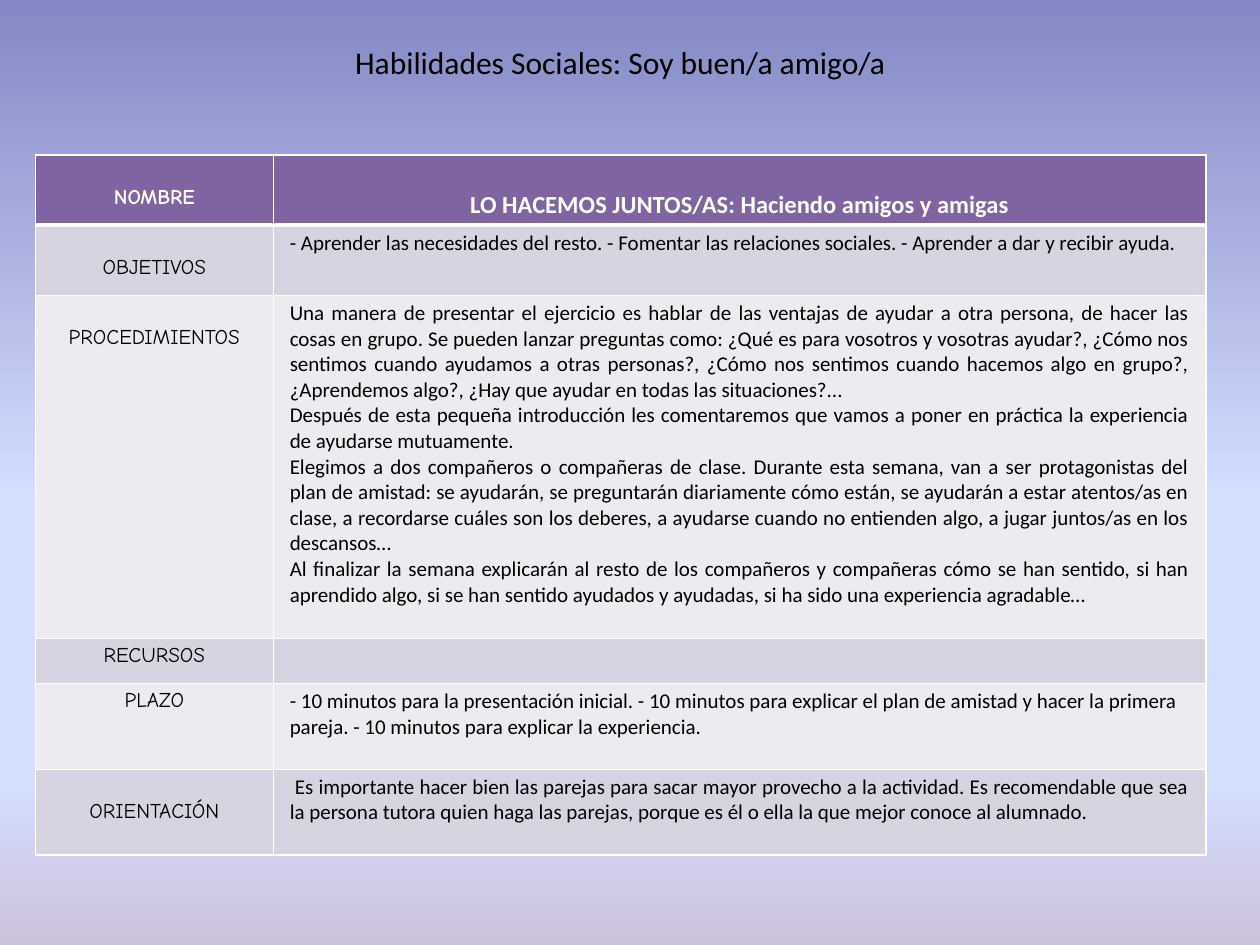
from copy import deepcopy
from dataclasses import dataclass

from lxml import etree
from pptx import Presentation
from pptx.dml.color import RGBColor
from pptx.enum.text import PP_ALIGN
from pptx.oxml.ns import qn
from pptx.util import Inches, Pt

SLIDE_WIDTH, SLIDE_HEIGHT = Inches(10), Inches(7.5)
CENTER, JUSTIFY, LEFT = PP_ALIGN.CENTER, PP_ALIGN.JUSTIFY, PP_ALIGN.LEFT
BLACK, WHITE = RGBColor(0, 0, 0), RGBColor(255, 255, 255)
PURPLE = RGBColor(0x80, 0x64, 0xA2)
BANDS = (RGBColor(0xED, 0xEA, 0xF0), RGBColor(0xD8, 0xD3, 0xE0))
GRADIENT = (
    (0, RGBColor(0x84, 0x88, 0xC4)),
    (0.53, RGBColor(0xD4, 0xDE, 0xFF)),
    (0.83, RGBColor(0xD4, 0xDE, 0xFF)),
    (1, RGBColor(0xCC, 0xC1, 0xDA)),
)
BODY_FONT, LABEL_FONT = "Calibri", "Comic Neue"
COLUMN_WIDTHS = (1.89, 7.4)
TABLE_LEFT, TABLE_TOP = 0.028, 0.164
SIDE_MARGIN, EDGE_MARGIN, LOWERED_MARGIN = 0.13, 0.04, 0.24


@dataclass
class ActivityRow:
    """One labelled row of the activity sheet."""
    label: str
    paragraphs: tuple[str, ...]
    height: float
    lowered_label: bool = True
    alignment: PP_ALIGN = JUSTIFY


ROWS = (
    ActivityRow("NOMBRE", ("LO HACEMOS JUNTOS/AS: Haciendo amigos y amigas",), 0.55, alignment=CENTER),
    ActivityRow("OBJETIVOS", (
        "- Aprender las necesidades del resto. - Fomentar las relaciones sociales. "
        "- Aprender a dar y recibir ayuda.",
    ), 0.56),
    ActivityRow("PROCEDIMIENTOS", (
        "Una manera de presentar el ejercicio es hablar de las ventajas de ayudar a otra persona, "
        "de hacer las cosas en grupo. Se pueden lanzar preguntas como: ¿Qué es para vosotros y "
        "vosotras ayudar?, ¿Cómo nos sentimos cuando ayudamos a otras personas?, ¿Cómo nos sentimos "
        "cuando hacemos algo en grupo?, ¿Aprendemos algo?, ¿Hay que ayudar en todas las situaciones?...",
        "Después de esta pequeña introducción les comentaremos que vamos a poner en práctica "
        "la experiencia de ayudarse mutuamente.",
        "Elegimos a dos compañeros o compañeras de clase. Durante esta semana, van a ser protagonistas "
        "del plan de amistad: se ayudarán, se preguntarán diariamente cómo están, se ayudarán a estar "
        "atentos/as en clase, a recordarse cuáles son los deberes, a ayudarse cuando no entienden algo, "
        "a jugar juntos/as en los descansos…",
        "Al finalizar la semana explicarán al resto de los compañeros y compañeras cómo se han sentido, "
        "si han aprendido algo, si se han sentido ayudados y ayudadas, si ha sido una experiencia agradable…",
    ), 2.72),
    ActivityRow("RECURSOS", ("",), 0.28, lowered_label=False),
    ActivityRow("PLAZO", (
        "- 10 minutos para la presentación inicial. - 10 minutos para explicar el plan de amistad "
        "y hacer la primera pareja. - 10 minutos para explicar la experiencia.",
    ), 0.68, lowered_label=False, alignment=LEFT),
    ActivityRow("ORIENTACIÓN", (
        " Es importante hacer bien las parejas para sacar mayor provecho a la actividad. Es recomendable "
        "que sea la persona tutora quien haga las parejas, porque es él o ella la que mejor conoce al alumnado.",
    ), 0.68),
)


def apply_gradient(slide) -> None:
    """Fill the slide background from top to bottom."""
    fill = slide.background.fill
    fill.gradient()
    fill.gradient_angle = 270
    stop_list = next(slide.element.iter(qn("a:gsLst")))
    while len(stop_list) < len(GRADIENT):
        stop_list.append(deepcopy(stop_list[0]))
    for stop, (position, color) in zip(fill.gradient_stops, GRADIENT):
        stop.position = position
        stop.color.rgb = color


def write_paragraphs(frame, texts: tuple[str, ...], alignment: PP_ALIGN, font_values: dict) -> None:
    """Write equally formatted paragraphs into a text frame."""
    for index, text in enumerate(texts):
        paragraph = frame.paragraphs[0] if index == 0 else frame.add_paragraph()
        paragraph.alignment = alignment
        run = paragraph.add_run()
        run.text = text
        run.font.color.rgb = font_values["color"]
        for name in ("name", "size", "bold"):
            setattr(run.font, name, font_values[name])


def format_cell(cell, color: RGBColor, top_margin: float, edges: dict[str, float]) -> None:
    """Set the margins, white borders and fill of a cell."""
    margins = {"left": SIDE_MARGIN, "right": SIDE_MARGIN, "top": top_margin, "bottom": EDGE_MARGIN}
    for side, margin in margins.items():
        setattr(cell, f"margin_{side}", Inches(margin))
    properties = cell._tc.get_or_add_tcPr()
    for edge, width in edges.items():
        line = etree.SubElement(properties, qn(f"a:ln{edge}"), w=str(Pt(width)))
        solid = etree.SubElement(line, qn("a:solidFill"))
        etree.SubElement(solid, qn("a:srgbClr"), val=str(WHITE))
    cell.fill.solid()
    cell.fill.fore_color.rgb = color


def add_activity_table(slide) -> None:
    """Draw the table of labels and descriptions."""
    table = slide.shapes.add_table(
        len(ROWS), len(COLUMN_WIDTHS),
        int(SLIDE_WIDTH * TABLE_LEFT), int(SLIDE_HEIGHT * TABLE_TOP),
        Inches(sum(COLUMN_WIDTHS)), Inches(sum(row.height for row in ROWS)),
    ).table
    table.first_row = table.horz_banding = False
    for column, width in zip(table.columns, COLUMN_WIDTHS):
        column.width = Inches(width)
    for index, row in enumerate(ROWS):
        header = index == 0
        table.rows[index].height = Inches(row.height)
        color = PURPLE if header else BANDS[index % 2]
        edges = {"L": 1, "R": 1, "T": 3 if index == 1 else 1, "B": 3 if header else 1}
        label_cell, body_cell = table.cell(index, 0), table.cell(index, 1)
        format_cell(label_cell, color, LOWERED_MARGIN if row.lowered_label else EDGE_MARGIN, edges)
        format_cell(body_cell, color, LOWERED_MARGIN + EDGE_MARGIN if header else EDGE_MARGIN, edges)
        font_values = {"name": LABEL_FONT, "size": Pt(12), "bold": header, "color": WHITE if header else BLACK}
        write_paragraphs(label_cell.text_frame, (row.label,), CENTER, font_values)
        body_values = font_values | {"name": BODY_FONT, "size": Pt(14 if header else 12)}
        write_paragraphs(body_cell.text_frame, row.paragraphs, row.alignment, body_values)


def add_title(slide) -> None:
    """Write the slide title above the table."""
    shape = slide.shapes.add_textbox(
        int(SLIDE_WIDTH * 0.272), int(SLIDE_HEIGHT * 0.039), int(SLIDE_WIDTH * 0.48), int(SLIDE_HEIGHT * 0.053)
    )
    shape.text_frame.word_wrap = True
    font_values = {"name": BODY_FONT, "size": Pt(18), "bold": False, "color": BLACK}
    write_paragraphs(shape.text_frame, ("Habilidades Sociales: Soy buen/a amigo/a",), LEFT, font_values)


def main() -> None:
    """Build and save the presentation."""
    presentation = Presentation()
    presentation.slide_width, presentation.slide_height = SLIDE_WIDTH, SLIDE_HEIGHT
    slide = presentation.slides.add_slide(presentation.slide_layouts[6])
    apply_gradient(slide)
    add_activity_table(slide)
    add_title(slide)
    presentation.save("out.pptx")


if __name__ == "__main__":
    main()
